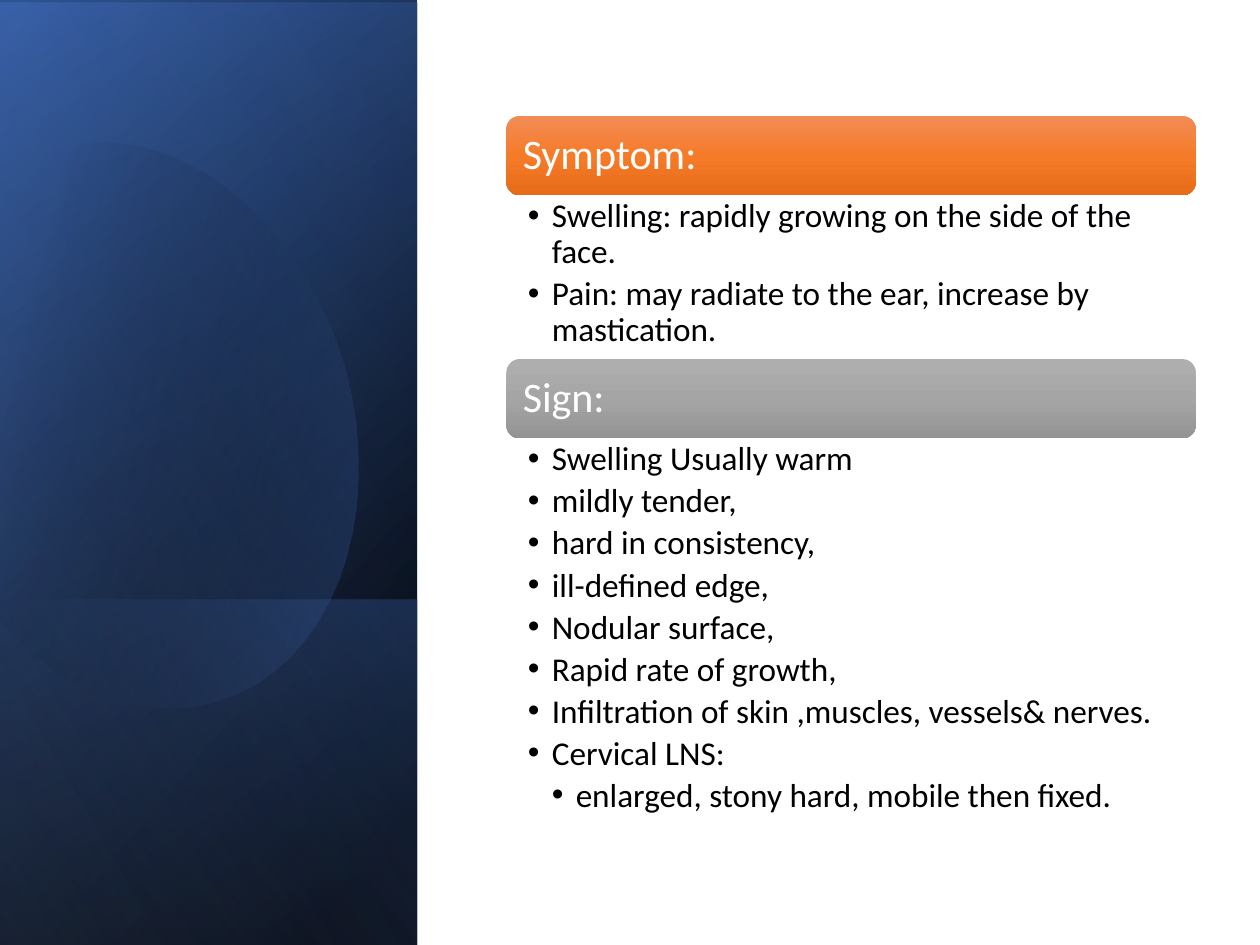
from math import cos, radians, sin

from pptx import Presentation
from pptx.dml.color import RGBColor
from pptx.enum.shapes import MSO_SHAPE
from pptx.enum.text import MSO_ANCHOR, PP_ALIGN
from pptx.oxml import parse_xml
from pptx.oxml.ns import nsdecls, qn
from pptx.util import Inches, Pt

BLACK = RGBColor(0x00, 0x00, 0x00)
WHITE = RGBColor(0xFF, 0xFF, 0xFF)
BLUE = RGBColor(0x44, 0x72, 0xC4)
DARK_BLUE = RGBColor(0x2F, 0x55, 0x97)
PALE_BLUE = RGBColor(0x8F, 0xAA, 0xDC)
ORANGES = RGBColor(0xF1, 0x8C, 0x57), RGBColor(0xF6, 0x7B, 0x28), RGBColor(0xE5, 0x6C, 0x19)
GRAYS = RGBColor(0xAF, 0xAF, 0xAF), RGBColor(0xA5, 0xA5, 0xA5), RGBColor(0x93, 0x93, 0x93)

BAR_H = 0.63
INDENT = 0.19
SYMPTOMS = [
    ("Swelling: rapidly growing on the side of the face.", 1),
    ("Pain: may radiate to the ear, increase by mastication.", 1),
]
SIGNS = [
    ("Swelling Usually warm", 1),
    ("mildly tender,", 1),
    ("hard in consistency,", 1),
    ("ill-defined edge,", 1),
    ("Nodular surface,", 1),
    ("Rapid rate of growth,", 1),
    ("Infiltration of skin ,muscles, vessels& nerves.", 1),
    ("Cervical LNS:", 1),
    ("enlarged, stony hard, mobile then fixed.", 2),
]
BLOB_START = (0.96, 1.14)
BLOB_SEGMENTS = [
    [(1.71, 1.22), (2.44, 1.92), (2.73, 2.9)],
    [(3.07, 4.12), (2.62, 5.31), (1.71, 5.57)],
    [(1.14, 5.74), (0.53, 5.5), (0.07, 5)],
    [(-0.03, 4.88)],
    [(-0.25, 1.66)],
    [(-0.15, 1.54)],
    [(0.02, 1.37), (0.22, 1.25), (0.45, 1.18)],
    [(0.62, 1.13), (0.79, 1.12), (0.96, 1.14)],
]


def style_gradient(sp, stops, angle):
    """Fill a shape with (position, colour, opacity) stops, without line or shadow."""
    sp.shadow.inherit = False
    sp.line.fill.background()
    sp.fill.gradient()
    gs = "".join(
        f'<a:gs pos="{pos * 1000}"><a:srgbClr val="{color}">'
        f'<a:alpha val="{alpha * 1000}"/></a:srgbClr></a:gs>'
        for pos, color, alpha in stops
    )
    grad = parse_xml(
        f'<a:gradFill {nsdecls("a")} rotWithShape="1"><a:gsLst>{gs}</a:gsLst>'
        f'<a:lin ang="{angle * 60000}" scaled="0"/></a:gradFill>'
    )
    spPr = sp._element.spPr
    spPr.replace(spPr.find(qn("a:gradFill")), grad)


def add_panel(s, x, y, w, h, stops, angle):
    """Add a mirrored rectangle turned a quarter, covering the given visible box."""
    left, top = x + (w - h) / 2, y + (h - w) / 2
    sp = s.shapes.add_shape(
        MSO_SHAPE.RECTANGLE, Inches(left), Inches(top), Inches(h), Inches(w)
    )
    sp.rotation = 90
    sp._element.spPr.xfrm.set("flipH", "1")
    style_gradient(sp, stops, angle)


def curve_points(start, segments, steps=16):
    """Return the points along a run of lines and cubic curves."""
    points = [start]
    for seg in segments:
        if len(seg) == 1:
            points += seg
            continue
        ctrl = [points[-1], *seg]
        for i in range(1, steps + 1):
            t = i / steps
            weights = (1 - t) ** 3, 3 * t * (1 - t) ** 2, 3 * t * t * (1 - t), t ** 3
            points.append(tuple(sum(k * c[d] for k, c in zip(weights, ctrl)) for d in (0, 1)))
    return points


def add_blob(s, x, y, w, h, rotation, stops, angle):
    """Add the rounded outline, turned about the centre of its box."""
    cx, cy = x + w / 2, y + h / 2
    ca, sa = cos(radians(-rotation)), sin(radians(-rotation))
    points = [
        (Inches(cx + (px - cx) * ca - (py - cy) * sa),
         Inches(cy + (px - cx) * sa + (py - cy) * ca))
        for px, py in curve_points(BLOB_START, BLOB_SEGMENTS)
    ]
    builder = s.shapes.build_freeform(*points[0])
    builder.add_line_segments(points[1:], close=True)
    sp = builder.convert_to_shape()
    sp.rotation = rotation
    style_gradient(sp, stops, angle)


def add_side_panel(s, x, y, w, h):
    """Layer the blue gradients of the side panel."""
    add_panel(s, x, y, w, h, [(8, BLACK, 100), (100, DARK_BLUE, 100)], 50)
    add_panel(s, x, y + 0.02, w, h, [(0, BLACK, 0), (99, BLUE, 46)], 30)
    add_panel(s, x, y + 4.76, w, 2.74, [(2, BLUE, 29), (100, BLACK, 30)], 130)
    add_blob(s, x - 0.41, y + 1.06, 3.2, 4.57, 343.9, [(29, BLACK, 0), (100, BLUE, 43)], 30)
    add_panel(s, x, y, w, h, [(0, BLACK, 0), (99, PALE_BLUE, 11)], 120)


def write_text(p, text, size, color, level=0, after=0):
    """Write one paragraph, with a bullet when it has a level."""
    p.alignment = PP_ALIGN.LEFT
    p.line_spacing = 0.9
    p.space_after = Pt(after)
    r = p.add_run()
    r.text = text
    r.font.size = Pt(size)
    r.font.name = "Calibri"
    r.font.color.rgb = color
    if level:
        p.level = level
        pPr = p._p.get_or_add_pPr()
        pPr.set("marL", str(Inches(INDENT * level)))
        pPr.set("indent", str(-Inches(INDENT)))
        pPr.append(parse_xml(f'<a:buFont {nsdecls("a")} typeface="Arial"/>'))
        pPr.append(parse_xml(f'<a:buChar {nsdecls("a")} char="•"/>'))


def set_insets(tf, left, top, right, bottom):
    """Set wrapping and the margins of a text frame."""
    tf.word_wrap = True
    tf.margin_left, tf.margin_top = Inches(left), Inches(top)
    tf.margin_right, tf.margin_bottom = Inches(right), Inches(bottom)


def add_section(group, x, y, w, h, title, colors, items):
    """Add a heading bar with its bulleted list below."""
    bar = group.shapes.add_shape(
        MSO_SHAPE.ROUNDED_RECTANGLE, Inches(x), Inches(y), Inches(w), Inches(BAR_H)
    )
    style_gradient(bar, [(pos, c, 100) for pos, c in zip((0, 50, 100), colors)], 90)
    tf = bar.text_frame
    set_insets(tf, 0.1, 0.1, 0.1, 0.1)
    tf.vertical_anchor = MSO_ANCHOR.MIDDLE
    write_text(tf.paragraphs[0], title, 24, WHITE)

    box = group.shapes.add_textbox(
        Inches(x), Inches(y + BAR_H), Inches(w), Inches(h - BAR_H)
    )
    tf = box.text_frame
    set_insets(tf, 0.17, 0.03, 0.19, 0.03)
    for i, (text, level) in enumerate(items):
        p = tf.add_paragraph() if i else tf.paragraphs[0]
        write_text(p, text, 19, BLACK, level=level, after=3.5)


def main():
    """Build the slide and save it."""
    prs = Presentation()
    prs.slide_width, prs.slide_height = Inches(10), Inches(7.5)
    s = prs.slides.add_slide(prs.slide_layouts[6])
    add_side_panel(s, 0, 0, 3.31, 7.5)
    group = s.shapes.add_group_shape()
    add_section(group, 4.02, 0.92, 5.47, 1.93, "Symptom:", ORANGES, SYMPTOMS)
    add_section(group, 4.02, 2.85, 5.47, 3.84, "Sign:", GRAYS, SIGNS)
    prs.save("out.pptx")


if __name__ == "__main__":
    main()
